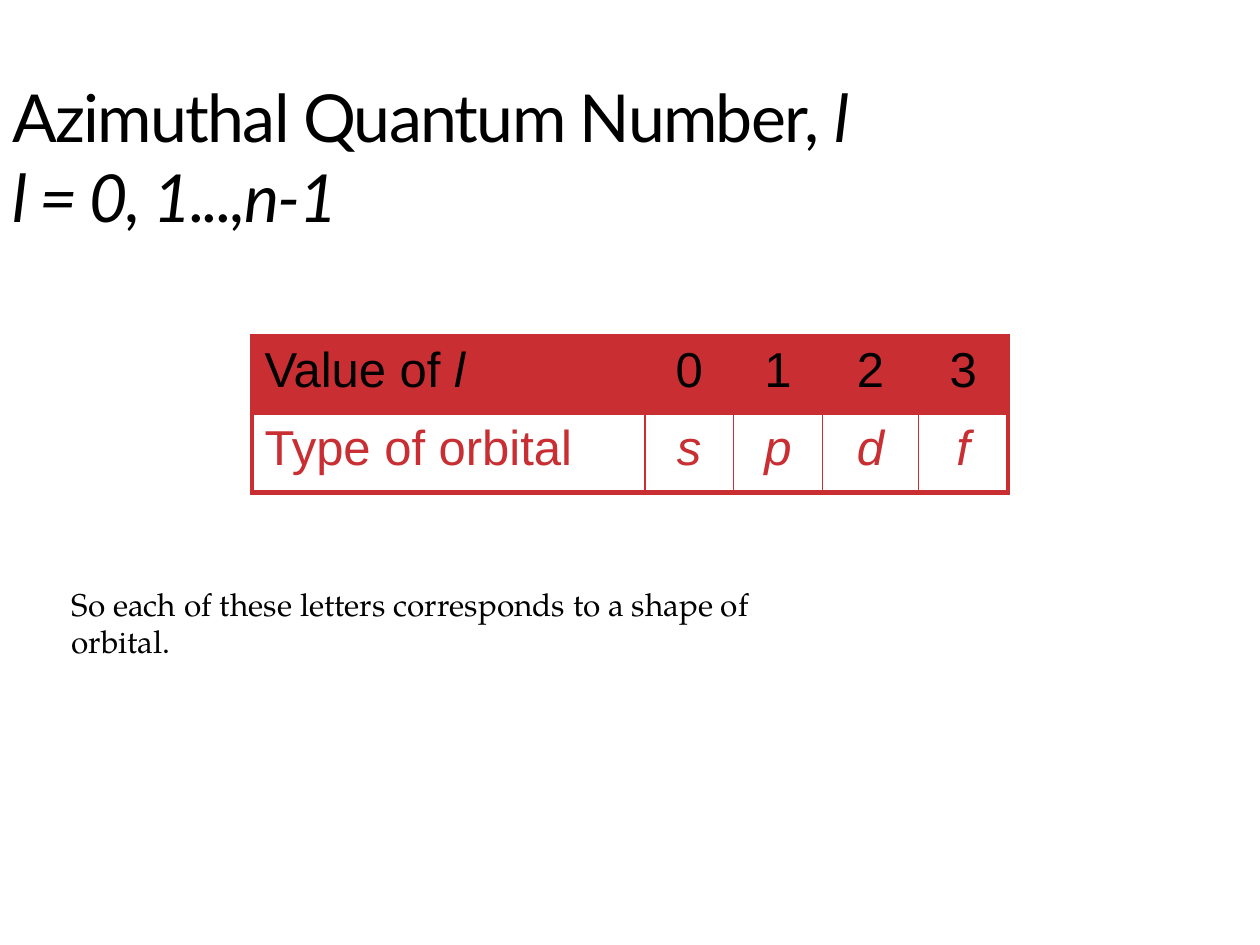
from pptx import Presentation
from pptx.dml.color import RGBColor
from pptx.enum.text import MSO_ANCHOR as Anchor, PP_ALIGN as Align
from pptx.oxml.ns import qn
from pptx.util import Inches, Pt
from lxml.etree import SubElement

BLACK = RGBColor(0x00, 0x00, 0x00)
RED = RGBColor(0xC8, 0x2E, 0x32)


def add_text(p, text, font="Arial", size=28, color=BLACK, italic=False, align=Align.LEFT, spacing=0):
    p.alignment = align
    r = p.add_run()
    r.text = text
    r.font.name = font
    r.font.size = Pt(size)
    r.font.color.rgb = color
    r.font.italic = italic
    if spacing:
        r.font._element.set("spc", str(spacing * 100))


class Deck:
    """Holds the presentation, its style and the current slide."""

    def __init__(self, width, height):
        self.prs = Presentation()
        self.prs.slide_width, self.prs.slide_height = Inches(width), Inches(height)
        self.s = self.prs.slides.add_slide(self.prs.slide_layouts[5])

    def title(self, left, top, width, height, lines):
        sp = self.s.shapes.title
        sp.left, sp.top = Inches(left), Inches(top)
        sp.width, sp.height = Inches(width), Inches(height)
        tf = sp.text_frame
        tf.vertical_anchor = Anchor.BOTTOM
        p = tf.paragraphs[0]
        for i, line in enumerate(lines):
            if i:
                p.add_line_break()
            for text, italic in line:
                add_text(p, text, font="Lato", size=37.8, italic=italic, spacing=-1)

    def text(self, left, top, width, height, text, **fmt):
        sp = self.s.shapes.add_textbox(Inches(left), Inches(top), Inches(width), Inches(height))
        tf = sp.text_frame
        tf.word_wrap = True
        add_text(tf.paragraphs[0], text, **fmt)

    def borders(self, cell, widths):
        tc_pr = cell._tc.get_or_add_tcPr()
        for side, width in zip("LRTB", widths):
            ln = SubElement(tc_pr, qn(f"a:ln{side}"), w=str(Pt(width)))
            fill = SubElement(ln, qn("a:solidFill"))
            SubElement(fill, qn("a:srgbClr"), val=str(RED))

    def table(self, left, top, col_widths, row_height, rows):
        n_rows, n_cols = len(rows), len(col_widths)
        table = self.s.shapes.add_table(
            n_rows, n_cols, Inches(left), Inches(top),
            Inches(sum(col_widths)), Inches(row_height * n_rows)).table
        table.first_row = table.horz_banding = False
        for col, width in zip(table.columns, col_widths):
            col.width = Inches(width)
        for i, row in enumerate(rows):
            table.rows[i].height = Inches(row_height)
            for j, runs in enumerate(row):
                cell = table.cell(i, j)
                edges = (j == 0, j == n_cols - 1, i == 0, i == n_rows - 1)
                self.borders(cell, [3 if edge else 1 for edge in edges])
                if i == 0:
                    cell.fill.solid()
                    cell.fill.fore_color.rgb = RED
                else:
                    cell.fill.background()
                for text, italic in runs:
                    add_text(cell.text_frame.paragraphs[0], text, italic=italic,
                             color=RED if i else BLACK,
                             align=Align.CENTER if j else Align.LEFT)


def main():
    deck = Deck(10, 7.5)
    deck.title(0, 0.67, 10, 1.25, [
        [("Azimuthal Quantum Number, ", False), ("l", True)],
        [("l = 0, 1...,n-1", True)],
    ])
    deck.table(2, 2.67, [3.12, 0.7, 0.71, 0.76, 0.71], 0.62, [
        [[("Value of ", False), ("l", True)]] + [[(value, False)] for value in "0123"],
        [[("Type of orbital", False)]] + [[(orbital, True)] for orbital in "spdf"],
    ])
    deck.text(0.47, 4.59, 6.31, 0.4,
              "So each of these letters corresponds to a shape of orbital.",
              font="TeX Gyre Pagella", size=18)
    deck.prs.save("out.pptx")


if __name__ == "__main__":
    main()
